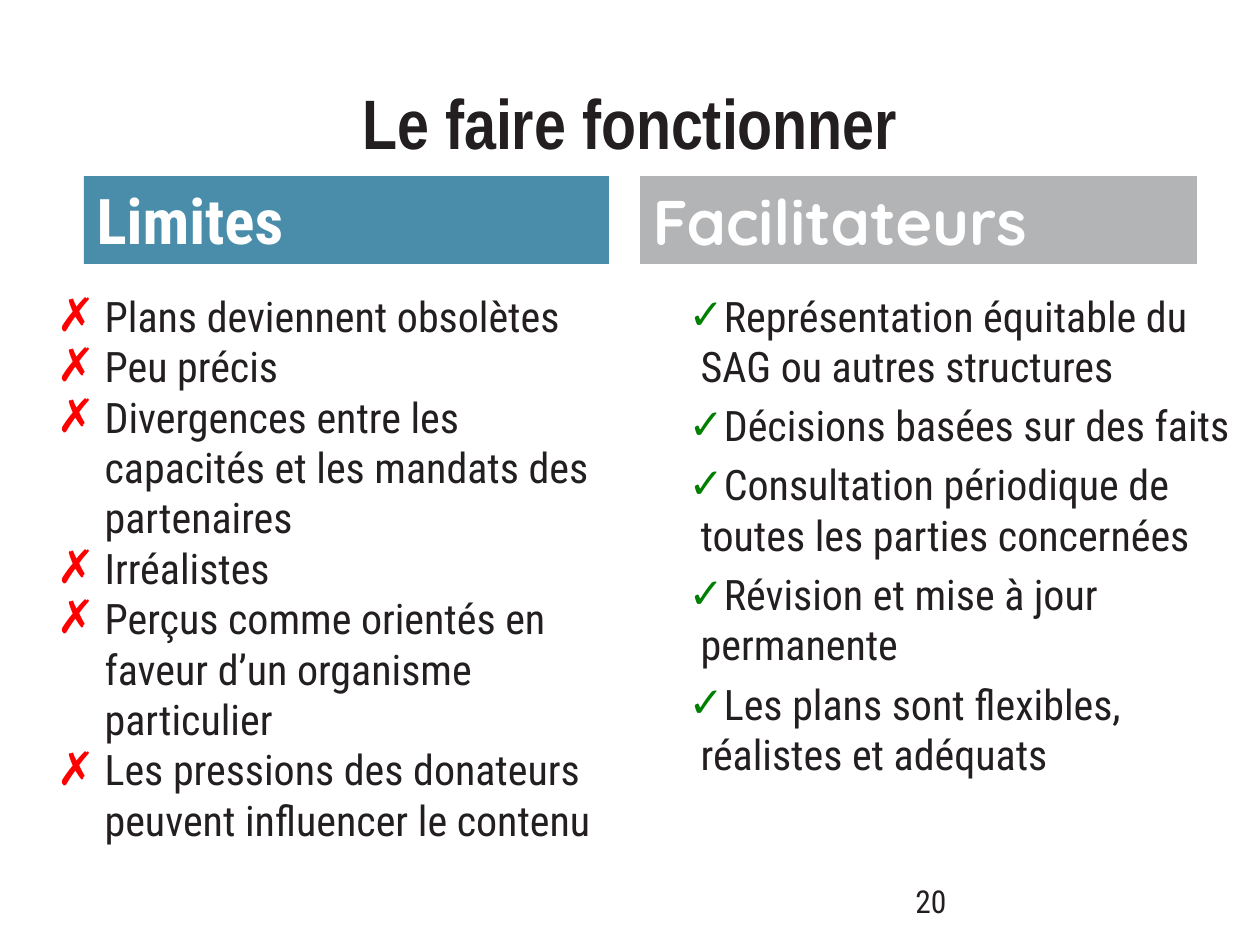
import pptx
import pptx.util
import pptx.dml.color
import pptx.enum.text
import pptx.oxml

RGB = pptx.dml.color.RGBColor
ALIGN = pptx.enum.text.PP_ALIGN
ANCHOR = pptx.enum.text.MSO_ANCHOR
FIT = pptx.enum.text.MSO_AUTO_SIZE

INK = RGB(0x23, 0x1F, 0x20)
WHITE = RGB(0xFF, 0xFF, 0xFF)
BLUE = RGB(0x4A, 0x8D, 0xAA)
GREY = RGB(0xB3, 0xB4, 0xB6)
RED = RGB(0xFF, 0x00, 0x00)
GREEN = RGB(0x00, 0x80, 0x00)

BODY = "Roboto Condensed"
SCALE = 914400 / 126
NS = 'xmlns:a="http://schemas.openxmlformats.org/drawingml/2006/main"'

LIMITS = [
    "Plans deviennent obsolètes",
    "Peu précis",
    "Divergences entre les capacités et les mandats des partenaires",
    "Irréalistes",
    "Perçus comme orientés en faveur d’un organisme particulier",
    "Les pressions des donateurs peuvent influencer le contenu",
]
HELPS = [
    "Représentation équitable du SAG ou autres structures",
    "Décisions basées sur des faits",
    "Consultation périodique de toutes les parties concernées",
    "Révision et mise à jour permanente",
    "Les plans sont flexibles, réalistes et adéquats",
]


def px(count):
    return pptx.util.Emu(round(count * SCALE))


def place(shape, box):
    shape.left, shape.top, shape.width, shape.height = map(px, box)


def mark(para, sign, color, size, hang):
    """Give a paragraph a coloured bullet and a hanging indent."""
    props = para._p.get_or_add_pPr()
    props.set("marL", str(px(48)))
    props.set("indent", str(-px(hang)))
    for part in (
        f'<a:buClr {NS}><a:srgbClr val="{color}"/></a:buClr>',
        f'<a:buSzPct {NS} val="{size * 1000}"/>',
        f'<a:buFont {NS} typeface="Arial"/>',
        f'<a:buChar {NS} char="{sign}"/>',
    ):
        props.append(pptx.oxml.parse_xml(part))


def write(shape, lines, font=BODY, size=24, color=INK, bold=False,
          align=ALIGN.LEFT, anchor=ANCHOR.TOP, gap=0, lead=1.0, bullet=None):
    frame = shape.text_frame
    frame.word_wrap = True
    frame.auto_size = FIT.NONE
    frame.vertical_anchor = anchor
    for i, line in enumerate(lines):
        para = frame.paragraphs[0] if i == 0 else frame.add_paragraph()
        para.alignment = align
        para.line_spacing = lead
        para.space_before = pptx.util.Pt(gap if i else 0)
        if bullet:
            mark(para, **bullet)
        run = para.add_run()
        run.text = line
        run.font.name = font
        run.font.size = pptx.util.Pt(size)
        run.font.bold = bold
        run.font.color.rgb = color


def column(head, body, box, title, lines, fill, shift, wide, font=BODY,
           lead=1.0, gap=0, bullet=None):
    """Fill one column: a coloured heading over a bulleted list."""
    left, top, width, height = box
    # Heading band
    place(head, (left, top, width, 88))
    head.fill.solid()
    head.fill.fore_color.rgb = fill
    write(head, [title], font=font, size=36, color=WHITE, bold=True,
          anchor=ANCHOR.BOTTOM, lead=lead)
    # List
    place(body, (left + shift, top + 108, wide, height - 108))
    write(body, lines, gap=gap, bullet=bullet)


def main():
    deck = pptx.Presentation()
    deck.slide_width, deck.slide_height = px(1260), px(945)
    slide = deck.slides.add_slide(deck.slide_layouts.get_by_name("Comparison"))
    title, head1, list1, head2, list2 = slide.placeholders

    # Title
    place(title, (63, 78, 1134, 87))
    write(title, ["Le faire fonctionner"], font="Arial Narrow", size=40,
          bold=True, align=ALIGN.CENTER, anchor=ANCHOR.MIDDLE)

    # Two columns
    column(head1, list1, (84, 176, 525, 733), "Limites", LIMITS, BLUE,
           shift=-40, wide=586, lead=0.9,
           bullet=dict(sign="✗", color=RED, size=110, hang=48))
    column(head2, list2, (640, 176, 557, 763), "Facilitateurs", HELPS, GREY,
           shift=0, wide=620, font="Quicksand", gap=5,
           bullet=dict(sign="✓", color=GREEN, size=100, hang=12))

    # Page number
    number = slide.shapes.add_textbox(*map(px, (903, 876, 294, 50)))
    write(number, ["20"], size=18)

    deck.save("out.pptx")


if __name__ == "__main__":
    main()
